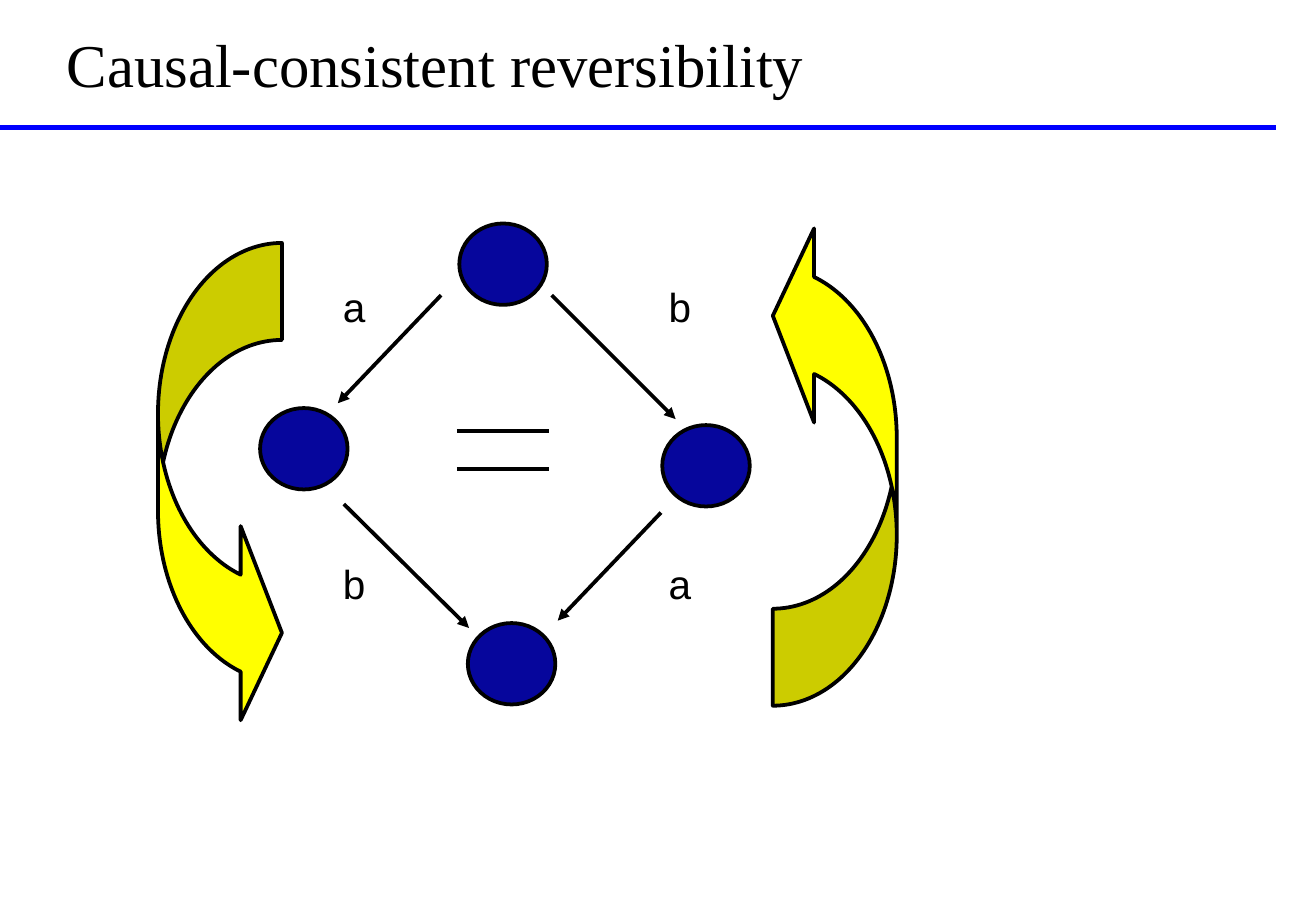
"""Builds a slide on causal-consistent reversibility."""
from dataclasses import dataclass

from lxml import etree
from pptx import Presentation
from pptx import util as u
from pptx.dml.color import RGBColor
from pptx.enum import shapes, text
from pptx.oxml.ns import qn


@dataclass(frozen=True)
class Theme:
    black: RGBColor = RGBColor(0, 0, 0)
    rule: RGBColor = RGBColor(0, 0, 255)
    state: RGBColor = RGBColor(0x06, 0x06, 0x9C)
    turn: RGBColor = RGBColor(255, 255, 0)
    title_font: str = "Times New Roman"
    label_font: str = "Arial"
    title_size: float = 36
    label_size: float = 24
    outline: float = 2.25
    rule_width: float = 3


class DiagramSlide:
    def __init__(self, presentation, theme):
        self.theme = theme
        self.slide = presentation.slides.add_slide(presentation.slide_layouts[5])

    def add_words(self, frame, words, font_name, size, alignment):
        paragraph = frame.paragraphs[0]
        paragraph.alignment = alignment
        run = paragraph.add_run()
        run.text = words
        run.font.name = font_name
        run.font.size = u.Pt(size)
        run.font.color.rgb = self.theme.black
        return paragraph

    def title(self, words, left, top, width, height):
        shape = self.slide.shapes.title
        shape.left, shape.top = u.Inches(left), u.Inches(top)
        shape.width, shape.height = u.Inches(width), u.Inches(height)
        frame = shape.text_frame
        frame.auto_size = text.MSO_AUTO_SIZE.NONE
        frame.vertical_anchor = text.MSO_ANCHOR.BOTTOM
        self.add_words(frame, words, self.theme.title_font, self.theme.title_size,
                       text.PP_ALIGN.LEFT)

    def shape(self, kind, left, top, width, height, fill):
        shape = self.slide.shapes.add_shape(
            kind, u.Inches(left), u.Inches(top), u.Inches(width), u.Inches(height))
        shape.shadow.inherit = False
        shape.fill.solid()
        shape.fill.fore_color.rgb = fill
        shape.line.color.rgb = self.theme.black
        shape.line.width = u.Pt(self.theme.outline)
        return shape

    def state(self, left, top):
        self.shape(shapes.MSO_SHAPE.OVAL, left, top, 0.72, 0.67, self.theme.state)

    def turn(self, left, top, rotation):
        arrow = self.shape(shapes.MSO_SHAPE.CURVED_RIGHT_ARROW, left, top, 1.02, 4.01,
                           self.theme.turn)
        arrow.rotation = rotation
        for index, value in enumerate((0.783, 1.567, 0.333)):
            arrow.adjustments[index] = value

    def line(self, start, end, color, width):
        connector = self.slide.shapes.add_connector(
            shapes.MSO_CONNECTOR.STRAIGHT, *map(u.Inches, (*start, *end)))
        connector.line.color.rgb = color
        connector.line.width = u.Pt(width)
        etree.SubElement(connector._element.spPr, qn("a:effectLst"))
        return connector

    def arrow(self, start, end):
        connector = self.line(start, end, self.theme.black, self.theme.outline)
        outline = connector._element.spPr.find(qn("a:ln"))
        etree.SubElement(outline, qn("a:tailEnd"), type="triangle")

    def label(self, words, left, top):
        box = self.slide.shapes.add_textbox(
            u.Inches(left), u.Inches(top), u.Inches(0.39), u.Inches(0.58))
        frame = box.text_frame
        frame.word_wrap = False
        paragraph = self.add_words(frame, words, self.theme.label_font,
                                   self.theme.label_size, text.PP_ALIGN.CENTER)
        paragraph.line_spacing = 1.2
        paragraph.space_before = u.Pt(1.5)


def main():
    presentation = Presentation()
    presentation.slide_width = u.Inches(10.83)
    presentation.slide_height = u.Inches(7.5)
    theme = Theme()
    diagram = DiagramSlide(presentation, theme)

    diagram.line((0, 1.05), (10.5, 1.05), theme.rule, theme.rule_width)
    diagram.title("Causal-consistent reversibility", 0.45, 0.18, 9.84, 0.69)

    for left, top in ((3.78, 1.84), (2.14, 3.36), (5.45, 3.5), (3.85, 5.13)):
        diagram.state(left, top)

    for start, end in (((3.63, 2.43), (2.78, 3.32)), ((5.44, 4.22), (4.59, 5.11)),
                       ((2.83, 4.15), (3.86, 5.17)), ((4.54, 2.43), (5.56, 3.45))):
        diagram.arrow(start, end)

    diagram.turn(1.3, 2, 0)
    diagram.turn(6.36, 1.8, 180)

    for top, row in ((2.19, "ab"), (4.47, "ba")):
        for left, action in zip((2.72, 5.4), row):
            diagram.label(action, left, top)

    for equals_y in (3.55, 3.86):
        diagram.line((3.76, equals_y), (4.52, equals_y), theme.black, theme.outline)

    presentation.save("out.pptx")


if __name__ == "__main__":
    main()
